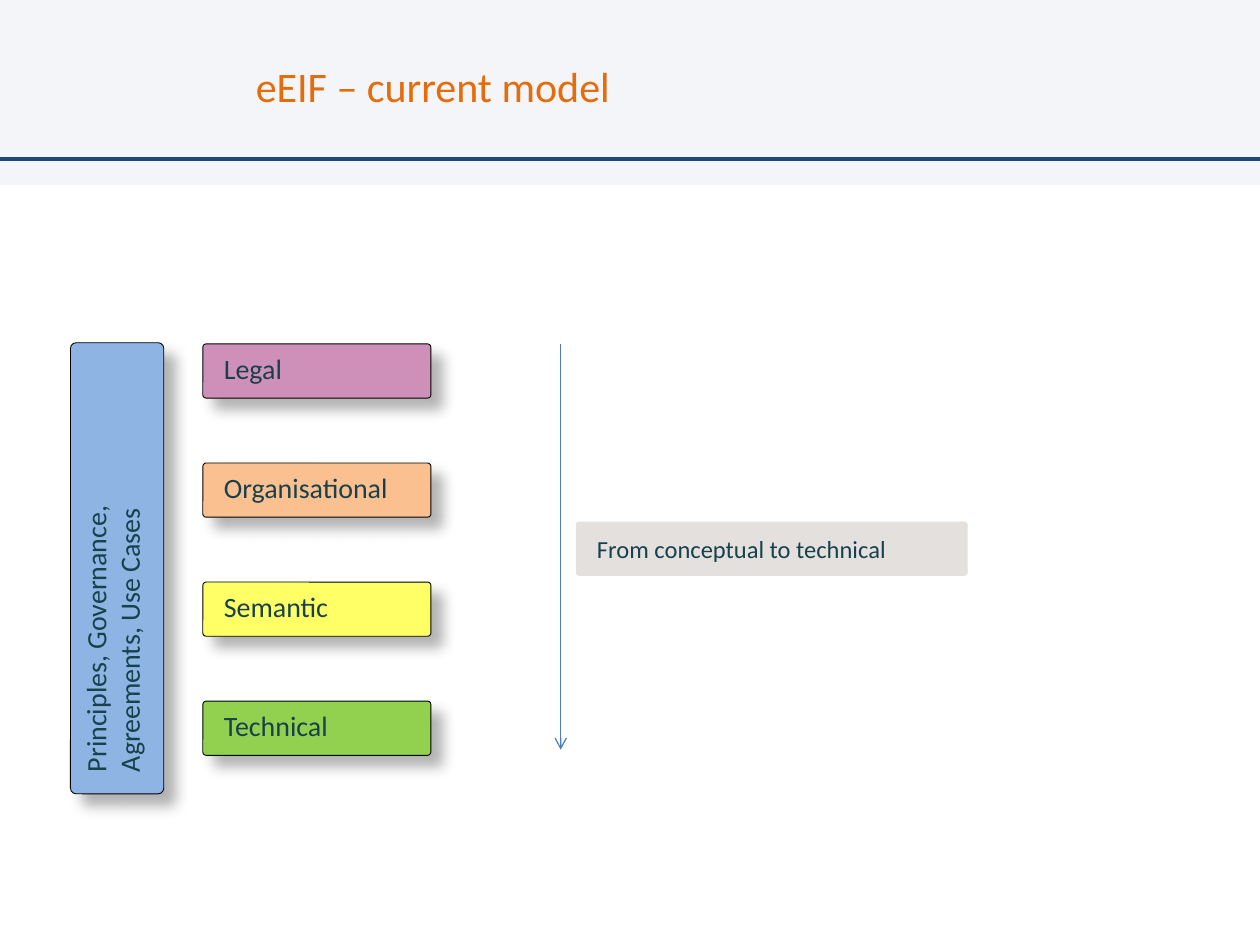
from lxml import etree
from pptx import Presentation
from pptx.dml.color import RGBColor
from pptx.enum import shapes, text
from pptx.oxml import ns
from pptx.util import Inches, Pt

# Content
TITLE = "eEIF – current model"
PILLAR = "Principles, Governance,\nAgreements, Use Cases"
LAYERS = [
    ("Legal", RGBColor(0xCE, 0x90, 0xB8)),
    ("Organisational", RGBColor(0xFA, 0xC0, 0x90)),
    ("Semantic", RGBColor(0xFF, 0xFF, 0x66)),
    ("Technical", RGBColor(0x92, 0xD0, 0x50)),
]
CAPTION = "From conceptual to technical"

# Style
FONT = "Calibri"
BACKGROUND = RGBColor(0xF3, 0xF5, 0xF9)
WHITE = RGBColor(0xFF, 0xFF, 0xFF)
BLACK = RGBColor(0, 0, 0)
NAVY = RGBColor(0x1F, 0x49, 0x7D)
ORANGE = RGBColor(0xE4, 0x6C, 0x0A)
INK = RGBColor(0x18, 0x41, 0x4C)
PILLAR_BLUE = RGBColor(0x8E, 0xB4, 0xE3)
ARROW_BLUE = RGBColor(0x4B, 0x7E, 0xBC)
CAPTION_GREY = RGBColor(0xE3, 0xE0, 0xDD)

# Layout, in inches
LAYER_LEFT, LAYER_TOP, LAYER_STEP = 1.61, 2.73, 0.945
LAYER_W, LAYER_H = 1.81, 0.43


def style_text(tf, size, color):
    for p in tf.paragraphs:
        p.alignment = text.PP_ALIGN.LEFT
        for r in p.runs:
            r.font.name, r.font.size = FONT, Pt(size)
            r.font.color.rgb = color


def add_shadow(sp):
    effects = sp._element.spPr.find(ns.qn("a:effectLst"))
    shadow = etree.SubElement(
        effects, ns.qn("a:outerShdw"), blurRad=str(Pt(8)), dist=str(Pt(9)),
        dir=str(45 * 60000), algn="tl", rotWithShape="0")
    color = etree.SubElement(shadow, ns.qn("a:srgbClr"), val=str(BLACK))
    etree.SubElement(color, ns.qn("a:alpha"), val="30000")


def add_box(s, words, left, top, width, height, fill, size=16, raised=True):
    sp = s.shapes.add_shape(
        shapes.MSO_SHAPE.ROUNDED_RECTANGLE,
        Inches(left), Inches(top), Inches(width), Inches(height))
    sp.adjustments[0] = 0.06
    sp.shadow.inherit = False
    sp.fill.solid()
    sp.fill.fore_color.rgb = fill
    if raised:
        sp.line.color.rgb, sp.line.width = BLACK, Pt(0.5)
        add_shadow(sp)
    else:
        sp.line.fill.background()
    tf = sp.text_frame
    tf.word_wrap = True
    tf.margin_left, tf.margin_right = Inches(0.16), Inches(0.1)
    tf.margin_top = tf.margin_bottom = Inches(0.05)
    tf.vertical_anchor = text.MSO_ANCHOR.TOP if raised else text.MSO_ANCHOR.MIDDLE
    tf.text = words
    style_text(tf, size, INK)
    return sp


def add_line(s, x1, y1, x2, y2, color, width):
    line = s.shapes.add_connector(
        shapes.MSO_CONNECTOR.STRAIGHT,
        Inches(x1), Inches(y1), Inches(x2), Inches(y2))
    line.line.color.rgb, line.line.width = color, Pt(width)
    etree.SubElement(line._element.spPr, ns.qn("a:effectLst"))
    return line


def main():
    prs = Presentation()
    prs.slide_width, prs.slide_height = Inches(10), Inches(7.5)
    s = prs.slides.add_slide(prs.slide_layouts[5])
    s.background.fill.solid()
    s.background.fill.fore_color.rgb = BACKGROUND

    # Header rule and white body panel
    add_line(s, 10, 1.26, 0, 1.26, NAVY, 2.25)
    panel = s.shapes.add_shape(
        shapes.MSO_SHAPE.RECTANGLE, 0, Inches(1.47), Inches(10), Inches(6.03))
    panel.shadow.inherit = False
    panel.fill.solid()
    panel.fill.fore_color.rgb = WHITE
    panel.line.fill.background()

    # Title
    title = s.shapes.title
    title.left, title.top = Inches(1.93), Inches(0.21)
    title.width, title.height = Inches(6.58), Inches(0.94)
    title.text_frame.text = TITLE
    title.text_frame.vertical_anchor = text.MSO_ANCHOR.MIDDLE
    style_text(title.text_frame, 24, ORANGE)

    # Vertical pillar beside the layers
    pillar = add_box(s, PILLAR, -0.86, 4.14, 3.58, 0.74, PILLAR_BLUE)
    pillar.rotation = 270

    # Stack of layers
    for i, (name, fill) in enumerate(LAYERS):
        add_box(s, name, LAYER_LEFT, LAYER_TOP + i * LAYER_STEP,
                LAYER_W, LAYER_H, fill)

    # Downward arrow and its caption
    arrow = add_line(s, 4.45, LAYER_TOP, 4.45, 5.95, ARROW_BLUE, 0.75)
    etree.SubElement(arrow.line._get_or_add_ln(), ns.qn("a:tailEnd"), type="arrow")
    add_box(s, CAPTION, 4.57, 4.14, 3.11, LAYER_H, CAPTION_GREY,
            size=14, raised=False)

    prs.save("out.pptx")


if __name__ == "__main__":
    main()
